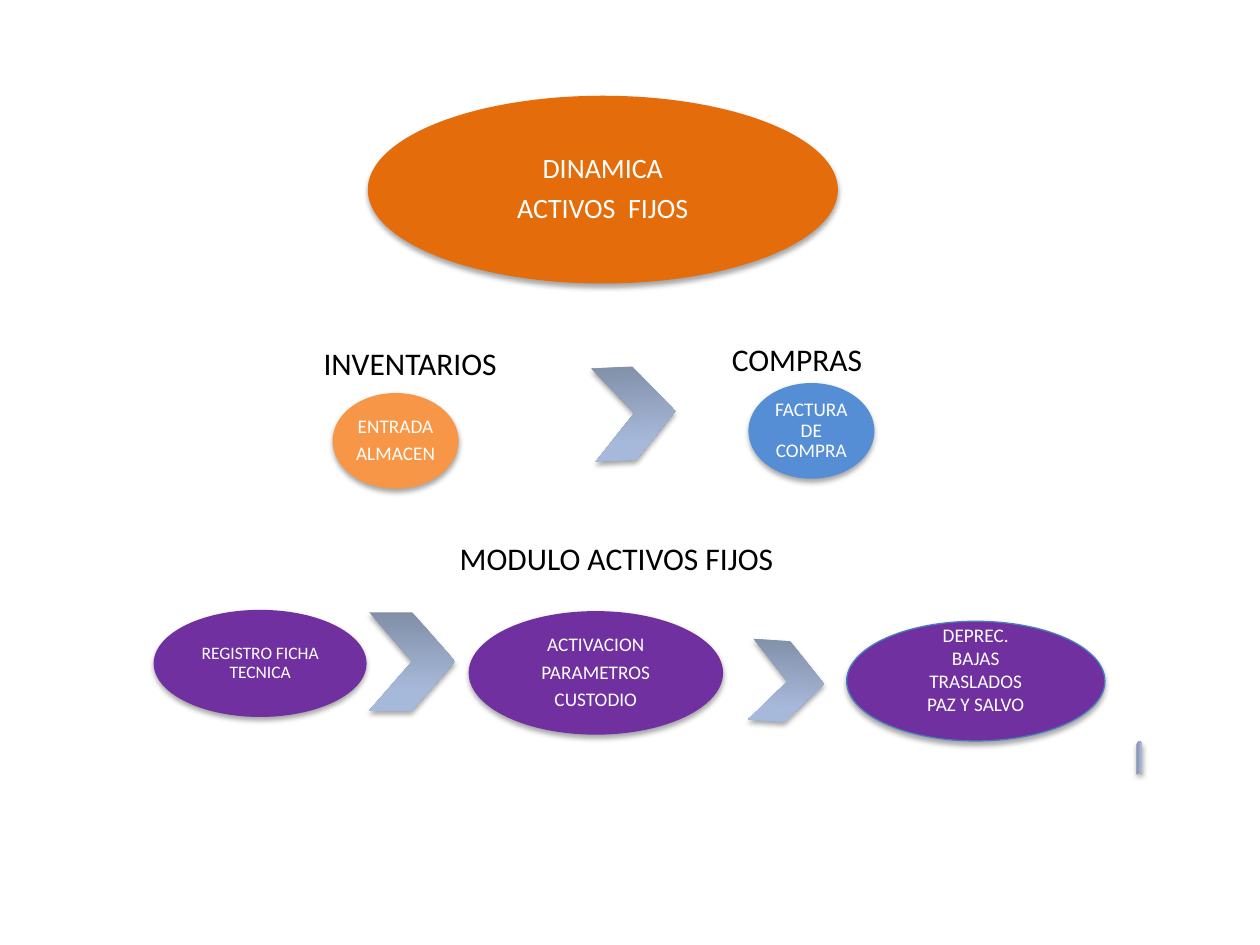
import copy

import lxml.etree
import pptx
import pptx.dml.color
import pptx.enum.shapes
import pptx.enum.text
import pptx.oxml.ns
import pptx.util

PAGE_SIZE = (720, 540)

ELLIPSES = [
    {"lines": ["DINAMICA", "ACTIVOS  FIJOS"], "at": (210.2, 54.7, 268.6, 107.3),
     "fill": "title", "size": "title"},
    {"lines": ["ENTRADA", "ALMACEN"], "at": (190.1, 224.6, 72, 54.7),
     "fill": "inventory", "size": "step"},
    {"lines": ["FACTURA DE COMPRA"], "at": (427.7, 218.9, 72, 54.7),
     "fill": "purchase", "size": "step"},
    {"lines": ["REGISTRO FICHA TECNICA"], "at": (87.8, 348.5, 121.7, 61.2),
     "fill": "module", "size": "small"},
    {"lines": ["ACTIVACION", "PARAMETROS", "CUSTODIO"], "at": (267.8, 349.2, 145.4, 70.6),
     "fill": "module", "size": "step"},
    {"lines": ["DEPREC.", "BAJAS", "TRASLADOS", "PAZ Y SALVO"],
     "at": (483.8, 355, 147.6, 68.4), "fill": "module", "size": "step",
     "outline": "outline", "leading": 1, "gap": 0, "raise": 13.4},
]

CHEVRONS = [
    {"at": (339.1, 209.5, 46.8, 53.3), "turn": 357.2, "flip": "flipV"},
    {"at": (211, 349.9, 49, 56.2), "turn": 180, "flip": "flipH"},
    {"at": (429.1, 366.5, 41.8, 46.1), "turn": 3.8, "flip": "flipV"},
    {"at": (641.5, 431.3, 19.4, 3.6), "turn": 270, "flip": "flipV"},
]

HEADINGS = [
    ("INVENTARIOS", (177.8, 193, 114.5, 28.8)),
    ("COMPRAS", (411.1, 190.8, 93.6, 28.8)),
    ("MODULO ACTIVOS FIJOS", (255.6, 304.6, 195.8, 28.8)),
]

THEME = {
    "font": "Calibri",
    "sizes": {"title": 16, "heading": 18, "step": 11, "small": 10},
    "colors": {"title": "E46C0A", "inventory": "F79646", "purchase": "558ED5",
               "module": "7030A0", "outline": "4B7EBC", "light": "FFFFFF",
               "dark": "000000"},
    "gradient": [(0, "818FA8"), (0.8, "A7B9DA"), (1, "A7BADC")],
    "shadow": {"color": "000000", "opacity": 35, "blur": 3.1, "distance": 1.8, "angle": 90},
    "leading": 0.9,
    "gap": 0.35,
    "inset": 1.4,
}

SHAPES = pptx.enum.shapes.MSO_SHAPE
ALIGN = pptx.enum.text.PP_ALIGN
ANCHOR = pptx.enum.text.MSO_ANCHOR


def apply(target, formats):
    for name, value in formats.items():
        setattr(target, name, value)


def rgb(value):
    return pptx.dml.color.RGBColor.from_string(value)


def place(at):
    return [pptx.util.Pt(length) for length in at]


def write(frame, lines, size, color, paragraph_format):
    for index, line in enumerate(lines):
        para = frame.add_paragraph() if index else frame.paragraphs[0]
        apply(para, paragraph_format)
        span = para.add_run()
        span.text = line
        apply(span.font, {"name": THEME["font"],
                          "size": pptx.util.Pt(THEME["sizes"][size])})
        span.font.color.rgb = rgb(THEME["colors"][color])


def add_shadow(shape):
    shape.shadow.inherit = False
    style = THEME["shadow"]
    tag = pptx.oxml.ns.qn
    effects = shape._element.spPr.find(tag("a:effectLst"))
    outer = lxml.etree.SubElement(effects, tag("a:outerShdw"), {
        "blurRad": str(pptx.util.Pt(style["blur"])),
        "dist": str(pptx.util.Pt(style["distance"])),
        "dir": str(style["angle"] * 60000), "rotWithShape": "0"})
    color = lxml.etree.SubElement(outer, tag("a:srgbClr"), {"val": style["color"]})
    lxml.etree.SubElement(color, tag("a:alpha"), {"val": str(style["opacity"] * 1000)})


def add_ellipse(page, item):
    shape = page.shapes.add_shape(SHAPES.OVAL, *place(item["at"]))
    shape.fill.solid()
    shape.fill.fore_color.rgb = rgb(THEME["colors"][item["fill"]])
    if "outline" in item:
        shape.line.color.rgb = rgb(THEME["colors"][item["outline"]])
        shape.line.width = pptx.util.Pt(0.75)
    else:
        shape.line.fill.background()
    add_shadow(shape)
    inset = pptx.util.Pt(THEME["inset"])
    apply(shape.text_frame, {
        "word_wrap": True, "vertical_anchor": ANCHOR.MIDDLE,
        "margin_left": inset, "margin_right": inset, "margin_top": inset,
        "margin_bottom": pptx.util.Pt(THEME["inset"] + item.get("raise", 0))})
    gap = item.get("gap", THEME["gap"]) * THEME["sizes"][item["size"]]
    write(shape.text_frame, item["lines"], item["size"], "light", {
        "alignment": ALIGN.CENTER, "space_after": pptx.util.Pt(gap),
        "line_spacing": item.get("leading", THEME["leading"])})


def add_chevron(page, item):
    shape = page.shapes.add_shape(SHAPES.CHEVRON, *place(item["at"]))
    shape.rotation = item["turn"]
    shape._element.spPr.xfrm.set(item["flip"], "1")
    shape.fill.gradient()
    shape.fill.gradient_angle = 90
    first = shape.fill.gradient_stops[0]._gs
    first.addnext(copy.deepcopy(first))
    for stop, (position, color) in zip(shape.fill.gradient_stops, THEME["gradient"]):
        stop.position = position
        stop.color.rgb = rgb(color)
    shape.line.fill.background()
    add_shadow(shape)


def add_heading(page, text, at):
    box = page.shapes.add_textbox(*place(at))
    apply(box.text_frame, {"word_wrap": False,
                           "auto_size": pptx.enum.text.MSO_AUTO_SIZE.SHAPE_TO_FIT_TEXT})
    write(box.text_frame, [text], "heading", "dark", {"alignment": ALIGN.LEFT})


def main():
    deck = pptx.Presentation()
    deck.slide_width, deck.slide_height = place(PAGE_SIZE)
    page = deck.slides.add_slide(deck.slide_layouts[6])
    for item in ELLIPSES:
        add_ellipse(page, item)
    for item in CHEVRONS:
        add_chevron(page, item)
    for text, at in HEADINGS:
        add_heading(page, text, at)
    deck.save("out.pptx")


if __name__ == "__main__":
    main()
